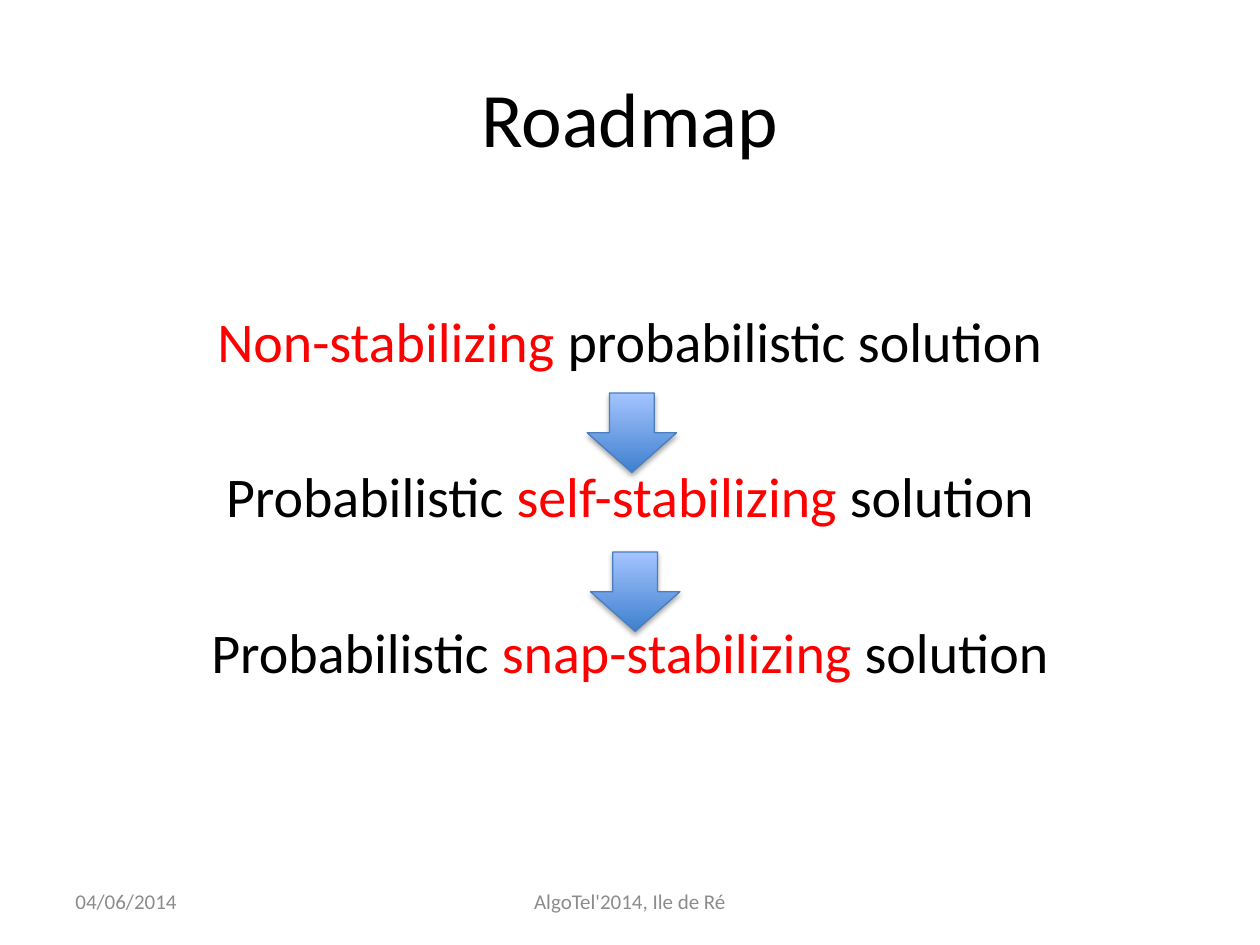
"""Build the roadmap slide: three solutions linked by two down arrows."""
from typing import NamedTuple

from lxml import etree
from pptx import Presentation
from pptx.dml.color import RGBColor
from pptx.enum import shapes, text
from pptx.oxml import ns
from pptx.slide import Slide
from pptx.util import Pt

BLACK = RGBColor(0x00, 0x00, 0x00)
RED = RGBColor(0xFF, 0x00, 0x00)
GREY = RGBColor(0x8C, 0x8C, 0x8C)
ARROW_DARK = RGBColor(0x3F, 0x80, 0xCE)
ARROW_LIGHT = RGBColor(0xA4, 0xC4, 0xFF)
ARROW_EDGE = RGBColor(0x4B, 0x7E, 0xBC)
FONT = "Calibri"
LEFT, CENTER = text.PP_ALIGN.LEFT, text.PP_ALIGN.CENTER
TOP, MIDDLE = text.MSO_ANCHOR.TOP, text.MSO_ANCHOR.MIDDLE


class Phrase(NamedTuple):
    words: str
    color: RGBColor = BLACK


class Block(NamedTuple):
    left: float
    top: float
    width: float
    height: float
    size: float
    lines: list[list[Phrase]]
    align: text.PP_ALIGN = CENTER
    anchor: text.MSO_ANCHOR = MIDDLE
    inset_top: float = 3.6
    gap: float = 0


class Arrow(NamedTuple):
    left: float
    top: float
    width: float = 51.1
    height: float = 45.4


BLOCKS = [
    Block(36, 21.6, 648, 90, 44, [[Phrase("Roadmap")]]),
    Block(36, 126, 648, 356.4, 32, [
        [Phrase("Non-stabilizing ", RED), Phrase("probabilistic solution")],
        [Phrase("Probabilistic "), Phrase("self-stabilizing ", RED), Phrase("solution")],
        [Phrase("Probabilistic "), Phrase("snap-stabilizing ", RED), Phrase("solution")],
    ], anchor=TOP, inset_top=49, gap=50.4),
    Block(246, 500.4, 228, 28.8, 12, [[Phrase("AlgoTel'2014, Ile de Ré", GREY)]]),
    Block(36, 500.4, 168, 28.8, 12, [[Phrase("04/06/2014", GREY)]], align=LEFT),
]
ARROWS = [Arrow(335.5, 224.6), Arrow(337.4, 315.4)]


def add_block(slide: Slide, block: Block) -> None:
    """Draw a text block with individually coloured phrases."""
    box = slide.shapes.add_textbox(*map(Pt, block[:4]))
    frame = box.text_frame
    frame.word_wrap = True
    frame.vertical_anchor = block.anchor
    frame.margin_top = Pt(block.inset_top)
    for index, phrases in enumerate(block.lines):
        line = frame.add_paragraph() if index else frame.paragraphs[0]
        line.alignment = block.align
        line.space_before = Pt(block.gap if index else 0)
        for phrase in phrases:
            run = line.add_run()
            run.text = phrase.words
            run.font.name = FONT
            run.font.size = Pt(block.size)
            run.font.color.rgb = phrase.color


def add_arrow(slide: Slide, arrow: Arrow) -> None:
    """Draw a down arrow with a vertical gradient and a soft shadow."""
    step = slide.shapes.add_shape(shapes.MSO_SHAPE.DOWN_ARROW, *map(Pt, arrow))
    step.fill.gradient()
    step.fill.gradient_angle = 90
    for stop, color in zip(step.fill.gradient_stops, (ARROW_DARK, ARROW_LIGHT)):
        stop.color.rgb = color
    step.line.color.rgb = ARROW_EDGE
    step.line.width = Pt(0.75)
    step.shadow.inherit = False
    effects = step.element.spPr.find(ns.qn("a:effectLst"))
    shadow = etree.SubElement(
        effects, ns.qn("a:outerShdw"), blurRad=str(Pt(3.1)), dist=str(Pt(1.8)),
        dir="5400000", rotWithShape="0")
    tone = etree.SubElement(shadow, ns.qn("a:srgbClr"), val=str(BLACK))
    etree.SubElement(tone, ns.qn("a:alpha"), val="35000")


def main() -> None:
    """Assemble and save the slide."""
    deck = Presentation()
    deck.slide_width, deck.slide_height = Pt(720), Pt(540)
    slide = deck.slides.add_slide(deck.slide_layouts[6])
    for block in BLOCKS:
        add_block(slide, block)
    for arrow in ARROWS:
        add_arrow(slide, arrow)
    deck.save("out.pptx")


if __name__ == "__main__":
    main()
